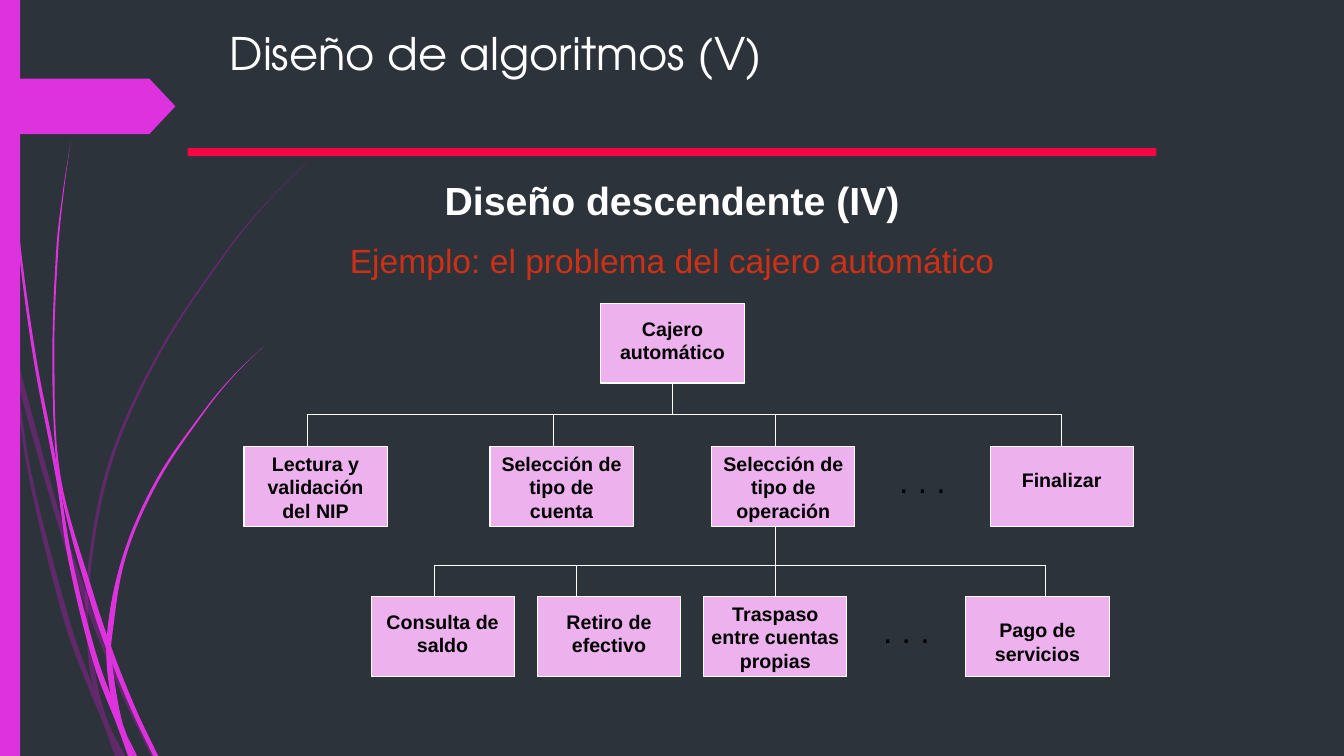
import pptx
import pptx.util
import pptx.dml.color
import pptx.enum.shapes
import pptx.enum.text
import pptx.oxml.ns
import lxml.etree

Inches = pptx.util.Inches
RGBColor = pptx.dml.color.RGBColor
MSO_SHAPE = pptx.enum.shapes.MSO_SHAPE
ALIGN = pptx.enum.text.PP_ALIGN
qn = pptx.oxml.ns.qn

SLATE = RGBColor(0x2C, 0x33, 0x3A)
MAGENTA = RGBColor(0xDE, 0x32, 0xDE)
PURPLE = RGBColor(0xB0, 0x1C, 0xB0)
PINK = RGBColor(0xED, 0xB1, 0xED)
CRIMSON = RGBColor(0xF7, 0x05, 0x44)
RUST = RGBColor(0xCE, 0x30, 0x16)
WHITE = RGBColor(0xFF, 0xFF, 0xFF)
BLACK = RGBColor(0, 0, 0)

deck = pptx.Presentation()
deck.slide_width, deck.slide_height = Inches(13.33), Inches(7.5)
page = deck.slides.add_slide(deck.slide_layouts[6])
page.background.fill.solid()
page.background.fill.fore_color.rgb = SLATE


def smooth(edge, steps=8):
    """Cubic curve through the points of an edge, with x as a function of y."""
    last = len(edge) - 1
    slopes = []
    for i in range(last + 1):
        (x0, y0), (x1, y1) = edge[max(i - 1, 0)], edge[min(i + 1, last)]
        slopes.append((x1 - x0) / (y1 - y0))
    curve = [edge[0]]
    for i in range(last):
        (x0, y0), (x1, y1) = edge[i], edge[i + 1]
        rise = y1 - y0
        for step in range(1, steps + 1):
            t = step / steps
            x = (x0 * (1 + 2 * t) * (1 - t) ** 2 + slopes[i] * rise * t * (1 - t) ** 2
                 + x1 * t * t * (3 - 2 * t) + slopes[i + 1] * rise * t * t * (t - 1))
            curve.append((x, y0 + rise * t))
    return curve


def write(box, text, size, color, font="Arial", bold=False, align=ALIGN.CENTER):
    frame = box.text_frame
    frame.word_wrap = True
    frame.vertical_anchor = pptx.enum.text.MSO_ANCHOR.TOP
    para = frame.paragraphs[0]
    para.text, para.alignment = text, align
    para.font.name, para.font.size, para.font.bold = font, pptx.util.Pt(size), bold
    para.font.color.rgb = color


# Grass blades: colour, opacity, left edge and right edge, from top to bottom
blades = [
    (PURPLE, 40,
     [(0, 2.99), (0.1, 3.44), (0.28, 4.7), (0.65, 6.21), (0.92, 6.93), (1.01, 7.14), (1.14, 7.5)],
     [(0, 2.82), (0.09, 3.22), (0.17, 3.76), (0.31, 4.69), (0.7, 6.19), (0.93, 6.83),
      (1.05, 7.11), (1.19, 7.5)]),
    (PURPLE, 40,
     [(0.14, 3.45), (0.17, 3.76), (0.58, 5.22), (0.84, 5.99), (1.23, 6.94), (1.5, 7.5)],
     [(0.14, 3.45), (0.62, 5.2), (0.85, 5.86), (0.92, 6.07), (1.27, 6.92), (1.55, 7.5)]),
    (PURPLE, 40,
     [(3.12, 1.53), (2.68, 1.97), (2.28, 2.44), (1.58, 3.48), (1.07, 4.61), (0.85, 5.84),
      (0.87, 6.46), (0.93, 6.83), (1.05, 7.11), (1.19, 7.5)],
     [(3.12, 1.53), (2.68, 1.98), (2.29, 2.45), (1.6, 3.49), (1.1, 4.62), (0.88, 5.84),
      (0.91, 6.46), (1.05, 7.11), (1.24, 7.5)]),
    (MAGENTA, 100,
     [(0.03, 0), (0.04, 0.48), (0.07, 1.1), (0.17, 2.33), (0.33, 3.55), (0.56, 4.77),
      (0.68, 5.57), (0.93, 6.59), (1.17, 7.22), (1.27, 7.5)],
     [(0.04, 0), (0.05, 0.48), (0.08, 1.09), (0.19, 2.32), (0.36, 3.55), (0.55, 4.53),
      (0.72, 5.56), (0.98, 6.57), (1.22, 7.19), (1.33, 7.5)]),
    (MAGENTA, 100,
     [(0.7, 1.41), (0.62, 1.93), (0.56, 2.45), (0.52, 3.49), (0.55, 4.49), (0.64, 5.05),
      (0.88, 5.92), (1.06, 6.45), (1.32, 7.08), (1.52, 7.5)],
     [(0.7, 1.41), (0.63, 1.93), (0.58, 2.45), (0.54, 3.49), (0.6, 4.72), (0.93, 5.9),
      (1.13, 6.49), (1.36, 7.06), (1.57, 7.5)]),
    (MAGENTA, 100,
     [(2.61, 3.44), (2.31, 3.73), (2.04, 4.05), (1.56, 4.74), (1.22, 5.51), (1.06, 6.31),
      (1.1, 6.91), (1.22, 7.19), (1.33, 7.5)],
     [(2.61, 3.44), (2.31, 3.74), (2.05, 4.06), (1.58, 4.76), (1.25, 5.52), (1.11, 6.33),
      (1.11, 6.56), (1.22, 7.19), (1.36, 7.5)]),
]
for color, opacity, left_edge, right_edge in blades:
    outline = [(Inches(x), Inches(y)) for x, y in smooth(left_edge) + smooth(right_edge)[::-1]]
    builder = page.shapes.build_freeform(*outline[0])
    builder.add_line_segments(outline[1:], close=True)
    blade = builder.convert_to_shape()
    blade.shadow.inherit = False
    blade.fill.solid()
    blade.fill.fore_color.rgb = color
    blade.line.fill.background()
    if opacity < 100:
        tint = blade.fill._xPr.find(".//" + qn("a:srgbClr"))
        lxml.etree.SubElement(tint, qn("a:alpha")).set("val", str(opacity * 1000))

# Side band, pennant and rule under the title
bars = [
    (MSO_SHAPE.RECTANGLE, 0, 0, 0.2, 7.5, MAGENTA),
    (MSO_SHAPE.PENTAGON, 0, 0.78, 1.74, 0.55, MAGENTA),
    (MSO_SHAPE.RECTANGLE, 1.86, 1.47, 9.61, 0.08, CRIMSON),
]
for kind, left, top, width, height, color in bars:
    bar = page.shapes.add_shape(kind, Inches(left), Inches(top), Inches(width), Inches(height))
    bar.shadow.inherit = False
    bar.fill.solid()
    bar.fill.fore_color.rgb = color
    bar.line.fill.background()
    if kind == MSO_SHAPE.PENTAGON:
        bar.adjustments[0] = 0.47

# Title, headings and ellipses
title = page.shapes.add_textbox(Inches(2.18), Inches(0.21), Inches(9.06), Inches(1.18))
write(title, "Diseño de algoritmos (V)", 32, WHITE, "TeX Gyre Adventor", align=ALIGN.LEFT)
labels = [
    ("Diseño descendente (IV)", 1.86, 1.7, 9.61, 0.57, 28, WHITE, True),
    ("Ejemplo: el problema del cajero automático", 1.86, 2.33, 9.61, 0.5, 24, RUST, False),
    (". . .", 8.56, 4.51, 1.18, 0.5, 24, BLACK, False),
    (". . .", 8.4, 6, 1.18, 0.5, 24, BLACK, False),
]
for text, left, top, width, height, size, color, bold in labels:
    label = page.shapes.add_textbox(Inches(left), Inches(top), Inches(width), Inches(height))
    write(label, text, size, color, bold=bold)

# Task boxes: text, left, top, space above the text, side inset
BOX_WIDTH, BOX_HEIGHT = 1.42, 0.79
tasks = [
    ("Cajero automático", 5.96, 3.01, 0.13, 0.1),
    ("Lectura y validación del NIP", 2.42, 4.43, 0.05, 0.1),
    ("Selección de tipo de cuenta", 4.86, 4.43, 0.05, 0.1),
    ("Selección de tipo de operación", 7.06, 4.43, 0.05, 0.1),
    ("Finalizar", 9.82, 4.43, 0.21, 0.1),
    ("Consulta de saldo", 3.68, 5.92, 0.13, 0.1),
    ("Retiro de efectivo", 5.33, 5.92, 0.13, 0.1),
    ("Traspaso entre cuentas propias", 6.98, 5.92, 0.05, 0.02),
    ("Pago de servicios", 9.58, 5.92, 0.21, 0.1),
]
boxes = {}
for text, left, top, above, inset in tasks:
    box = page.shapes.add_shape(MSO_SHAPE.RECTANGLE, Inches(left), Inches(top),
                                Inches(BOX_WIDTH), Inches(BOX_HEIGHT))
    box.shadow.inherit = False
    box.fill.solid()
    box.fill.fore_color.rgb = PINK
    box.line.color.rgb = WHITE
    box.line.width = pptx.util.Pt(0.75)
    write(box, text, 14, BLACK, bold=True)
    frame = box.text_frame
    frame.margin_top, frame.margin_bottom = Inches(above), 0
    frame.margin_left = frame.margin_right = Inches(inset)
    boxes[text] = box

# Tree branches: stem x, parent bottom, crossbar y, child top, drops
branches = [
    (6.67, 3.8, 4.11, 4.43, [3.05, 5.49, 7.69, 10.53]),
    (7.69, 5.22, 5.61, 5.92, [4.31, 5.72, 7.69, 10.37]),
]
joins = {(6.67, 3.8): ("Cajero automático", 2),
         (7.69, 5.92): ("Traspaso entre cuentas propias", 0)}
for stem, parent_bottom, crossbar, child_top, drops in branches:
    lines = [(stem, parent_bottom, stem, crossbar), (drops[0], crossbar, drops[-1], crossbar)]
    lines += [(x, crossbar, x, child_top) for x in drops]
    for x0, y0, x1, y1 in lines:
        line = page.shapes.add_connector(pptx.enum.shapes.MSO_CONNECTOR.STRAIGHT,
                                         Inches(x0), Inches(y0), Inches(x1), Inches(y1))
        line.line.color.rgb = WHITE
        line.line.width = pptx.util.Pt(0.75)
        lxml.etree.SubElement(line._element.spPr, qn("a:effectLst"))
        if (x0, y0) in joins:
            name, side = joins[x0, y0]
            line.begin_connect(boxes[name], side)
        if (x1, y1) in joins:
            name, side = joins[x1, y1]
            line.end_connect(boxes[name], side)

deck.save("out.pptx")
